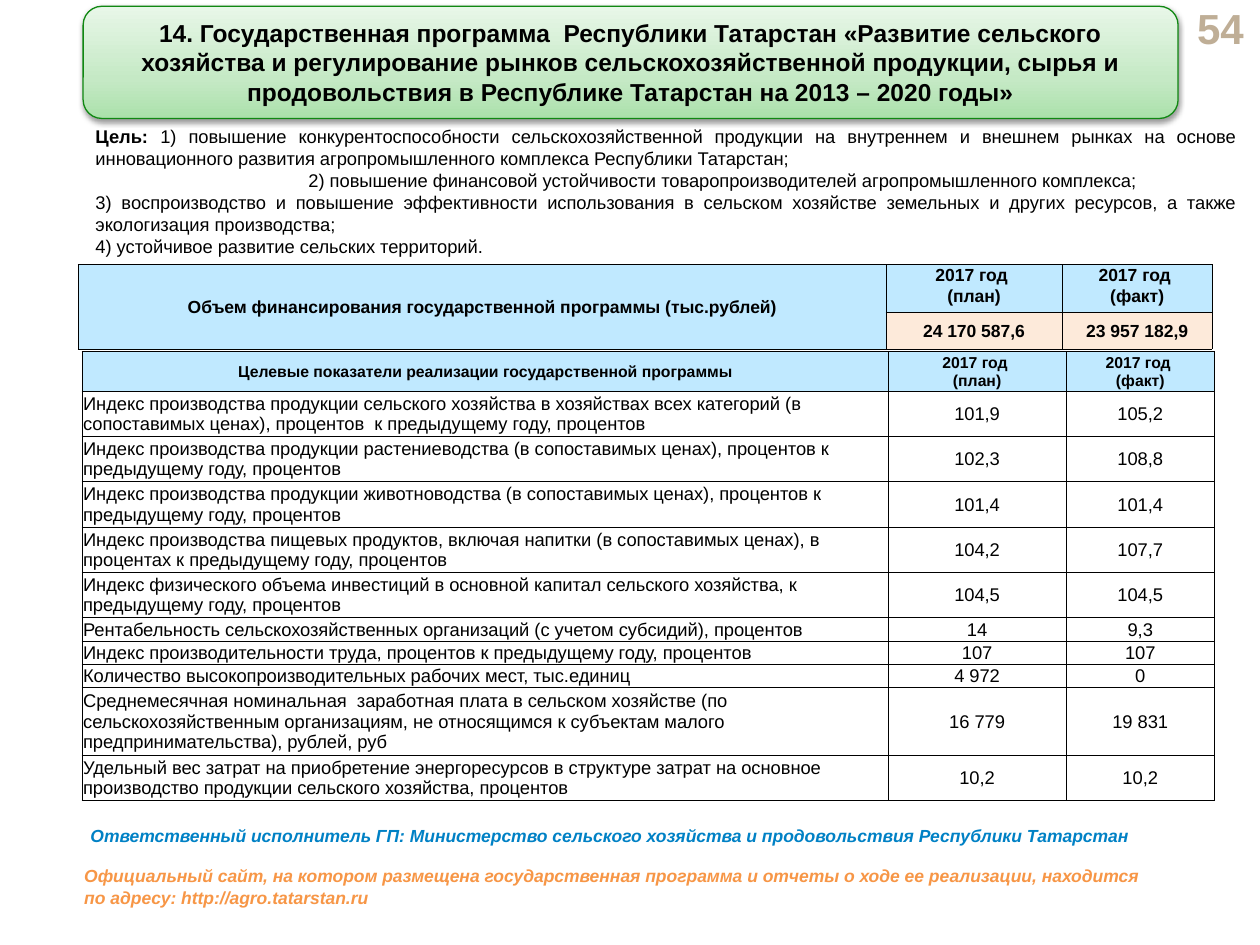
from dataclasses import dataclass

from pptx import Presentation
from pptx.dml.color import RGBColor
from pptx.enum.shapes import MSO_SHAPE
from pptx.enum.text import MSO_ANCHOR, PP_ALIGN
from pptx.oxml import parse_xml
from pptx.oxml.ns import nsdecls
from pptx.util import Inches, Pt


@dataclass(frozen=True)
class Theme:
    font: str = "Arial"
    black: str = "000000"
    white: str = "FFFFFF"
    header: str = "C0E9FF"
    amount: str = "FDEADA"
    number: str = "BFAE96"
    blue: str = "0081C5"
    orange: str = "F79646"
    title_line: str = "108812"
    title_stops: tuple = ((0, "ABE1AB"), (35, "C5E9C5"), (100, "E8F7E8"))
    number_size: float = 24
    title_size: float = 14
    body_size: float = 10.5
    label_size: float = 10
    small_size: float = 9


@dataclass(frozen=True)
class Indicator:
    name: str
    plan: str
    fact: str
    height: float = 0.357


T = Theme()
PLAN, FACT = "2017 год \n(план)", "2017 год \n(факт)"
GOALS = (
    "1) повышение конкурентоспособности сельскохозяйственной продукции на внутреннем и внешнем рынках на основе "
    "инновационного развития агропромышленного комплекса Республики Татарстан;\n"
    "2) повышение финансовой устойчивости товаропроизводителей агропромышленного комплекса;\n"
    "3) воспроизводство и повышение эффективности использования в сельском хозяйстве земельных и других ресурсов, "
    "а также экологизация производства;\n"
    "4) устойчивое развитие сельских территорий."
)
INDICATORS = [
    Indicator("Индекс производства продукции сельского хозяйства в хозяйствах всех категорий (в сопоставимых ценах), "
              "процентов  к предыдущему году, процентов", "101,9", "105,2"),
    Indicator("Индекс производства продукции растениеводства (в сопоставимых ценах), процентов к предыдущему году, "
              "процентов", "102,3", "108,8"),
    Indicator("Индекс производства продукции животноводства (в сопоставимых ценах), процентов к предыдущему году, "
              "процентов", "101,4", "101,4"),
    Indicator("Индекс производства пищевых продуктов, включая напитки (в сопоставимых ценах), в процентах "
              "к предыдущему году, процентов", "104,2", "107,7"),
    Indicator("Индекс физического объема инвестиций в основной капитал сельского хозяйства, к предыдущему году, "
              "процентов", "104,5", "104,5"),
    Indicator("Рентабельность сельскохозяйственных организаций (с учетом субсидий), процентов", "14", "9,3", 0.185),
    Indicator("Индекс производительности труда, процентов к предыдущему году, процентов", "107", "107", 0.185),
    Indicator("Количество высокопроизводительных рабочих мест, тыс.единиц", "4 972", "0", 0.185),
    Indicator("Среднемесячная номинальная  заработная плата в сельском хозяйстве (по сельскохозяйственным "
              "организациям, не относящимся к субъектам малого предпринимательства), рублей, руб",
              "16 779", "19 831", 0.53),
    Indicator("Удельный вес затрат на приобретение энергоресурсов в структуре затрат на основное производство "
              "продукции сельского хозяйства, процентов", "10,2", "10,2"),
]


def write(tf, text: str, size: float, color: str = T.black, bold: bool = False, italic: bool = False,
          align=PP_ALIGN.LEFT, spacing: float = 1.0, lead: str = "") -> None:
    for i, line in enumerate(text.split("\n")):
        p = tf.paragraphs[0] if i == 0 else tf.add_paragraph()
        p.alignment = align
        p.line_spacing = spacing
        runs = [(lead, True)] if lead and i == 0 else []
        for words, strong in runs + [(line, bold)]:
            r = p.add_run()
            r.text = words
            r.font.name = T.font
            r.font.size = Pt(size)
            r.font.bold = strong
            r.font.italic = italic
            r.font.color.rgb = RGBColor.from_string(color)


def add_text(slide, x: float, y: float, w: float, h: float, text: str, size: float,
             anchor=MSO_ANCHOR.TOP, **fmt):
    tf = slide.shapes.add_textbox(Inches(x), Inches(y), Inches(w), Inches(h)).text_frame
    tf.word_wrap = True
    tf.vertical_anchor = anchor
    write(tf, text, size, **fmt)
    return tf


def add_title(slide, x: float, y: float, w: float, h: float, text: str) -> None:
    s = slide.shapes.add_shape(MSO_SHAPE.ROUNDED_RECTANGLE, Inches(x), Inches(y), Inches(w), Inches(h))
    s.line.color.rgb = RGBColor.from_string(T.title_line)
    s.line.width = Pt(0.75)
    stops = "".join(f'<a:gs pos="{pos * 1000}"><a:srgbClr val="{color}"/></a:gs>' for pos, color in T.title_stops)
    sp = s._element.spPr
    sp.prstGeom.addnext(parse_xml(
        f'<a:gradFill {nsdecls("a")} rotWithShape="1"><a:gsLst>{stops}</a:gsLst>'
        '<a:lin ang="16200000" scaled="0"/></a:gradFill>'))
    sp.append(parse_xml(
        f'<a:effectLst {nsdecls("a")}><a:outerShdw blurRad="{Pt(3.1)}" dist="{Pt(1.6)}" dir="5400000" '
        f'rotWithShape="0"><a:srgbClr val="{T.black}"><a:alpha val="38000"/></a:srgbClr></a:outerShdw></a:effectLst>'))
    tf = s.text_frame
    tf.word_wrap = True
    tf.vertical_anchor = MSO_ANCHOR.TOP
    write(tf, text, T.title_size, bold=True, align=PP_ALIGN.CENTER)


def add_grid(slide, x: float, y: float, cols: list[float], rows: list[float]):
    frame = slide.shapes.add_table(len(rows), len(cols), Inches(x), Inches(y), Inches(sum(cols)), Inches(sum(rows)))
    table = frame.table
    table.first_row = table.horz_banding = False
    for col, width in zip(table.columns, cols):
        col.width = Inches(width)
    for row, height in zip(table.rows, rows):
        row.height = Inches(height)
    return table


def fill_cell(cell, text: str, size: float, fill: str, pad: float = 0.01, top: float = 0.01,
              anchor=MSO_ANCHOR.MIDDLE, **fmt) -> None:
    cell.margin_left = cell.margin_right = Inches(pad)
    cell.margin_top, cell.margin_bottom = Inches(top), 0
    cell.vertical_anchor = anchor
    cell.fill.solid()
    cell.fill.fore_color.rgb = RGBColor.from_string(fill)
    for i, side in enumerate("LRTB"):
        cell._tc.tcPr.insert(i, parse_xml(
            f'<a:ln{side} {nsdecls("a")} w="{Pt(0.25)}"><a:solidFill><a:srgbClr val="{T.black}"/>'
            f'</a:solidFill></a:ln{side}>'))
    if text:
        write(cell.text_frame, text, size, **fmt)


def add_funding(slide) -> None:
    table = add_grid(slide, 0.62, 2.1, [6.41, 1.4, 1.19], [0.38, 0.29])
    table.cell(0, 0).merge(table.cell(1, 0))
    bold = dict(bold=True, align=PP_ALIGN.CENTER)
    head = dict(bold, pad=0.06, top=0, spacing=1.07)
    fill_cell(table.cell(0, 0), "Объем финансирования государственной программы (тыс.рублей)",
              T.label_size, T.header, **head)
    fill_cell(table.cell(1, 0), "", T.label_size, T.header)
    for c, (label, amount) in enumerate([(PLAN, "24 170 587,6"), (FACT, "23 957 182,9")], 1):
        fill_cell(table.cell(0, c), label, T.label_size, T.header, anchor=MSO_ANCHOR.TOP, **head)
        fill_cell(table.cell(1, c), amount, T.label_size, T.amount, **bold)


def add_indicators(slide) -> None:
    table = add_grid(slide, 0.65, 2.79, [6.4, 1.41, 1.18], [0.31] + [item.height for item in INDICATORS])
    for c, label in enumerate(["Целевые показатели реализации государственной программы", PLAN, FACT]):
        fill_cell(table.cell(0, c), label, T.small_size, T.header, bold=True, align=PP_ALIGN.CENTER)
    for i, item in enumerate(INDICATORS, 1):
        for c, text in enumerate([item.name, item.plan, item.fact]):
            fill_cell(table.cell(i, c), text, T.body_size, T.white, align=PP_ALIGN.CENTER if c else PP_ALIGN.LEFT)


def main() -> None:
    prs = Presentation()
    prs.slide_width, prs.slide_height = Inches(10), Inches(7.5)
    slide = prs.slides.add_slide(prs.slide_layouts[6])
    add_text(slide, 9.33, 0.05, 0.64, 0.34, "54", T.number_size, anchor=MSO_ANCHOR.MIDDLE,
             color=T.number, bold=True, align=PP_ALIGN.RIGHT)
    add_funding(slide)
    goals = add_text(slide, 0.66, 0.94, 9.26, 1.16, GOALS, T.body_size, anchor=MSO_ANCHOR.MIDDLE,
                     lead="Цель: ", align=PP_ALIGN.JUSTIFY)
    goals.paragraphs[1]._p.get_or_add_pPr().set("indent", str(Inches(1.69)))
    add_indicators(slide)
    add_title(slide, 0.66, 0.05, 8.69, 0.89,
              "14. Государственная программа  Республики Татарстан «Развитие сельского хозяйства и регулирование "
              "рынков сельскохозяйственной продукции, сырья и продовольствия в Республике Татарстан "
              "на 2013 – 2020 годы»")
    add_text(slide, 0.62, 6.5, 9.33, 0.27,
             "Ответственный исполнитель ГП: Министерство сельского хозяйства и продовольствия Республики Татарстан",
             T.label_size, color=T.blue, bold=True, italic=True)
    add_text(slide, 0.57, 6.82, 8.75, 0.44,
             "Официальный сайт, на котором размещена государственная программа и отчеты о ходе ее реализации, "
             "находится по адресу: http://agro.tatarstan.ru",
             T.label_size, color=T.orange, bold=True, italic=True)
    prs.save("out.pptx")


if __name__ == "__main__":
    main()
